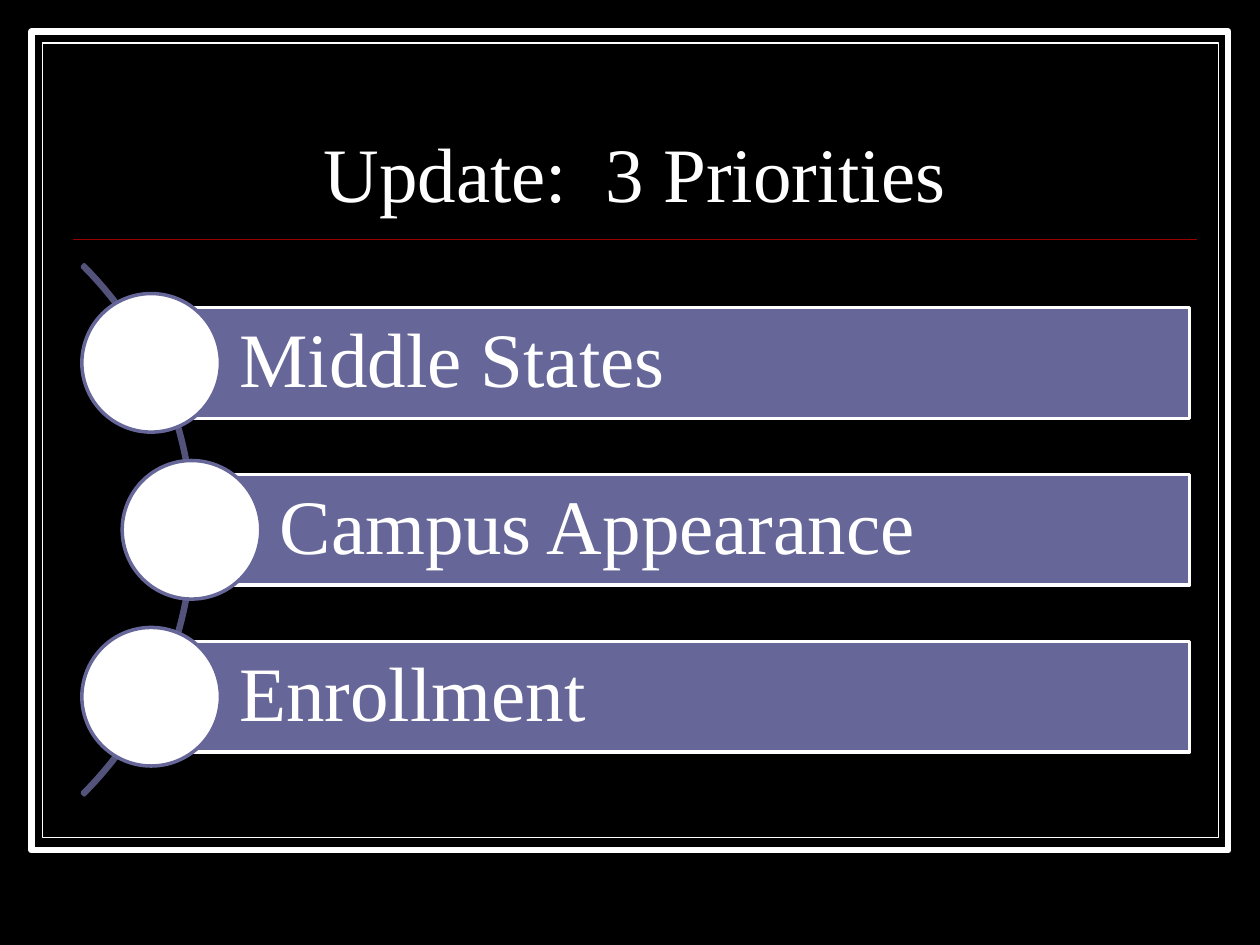
"""Build the "3 Priorities" slide: a framed title above a curved list of bars."""
from pptx import Presentation
from pptx.dml.color import RGBColor
from pptx.enum.shapes import MSO_CONNECTOR, MSO_SHAPE
from pptx.enum.text import MSO_ANCHOR, PP_ALIGN
from pptx.oxml.ns import qn
from pptx.util import Inches, Pt

RECTANGLE, OVAL, ARC = MSO_SHAPE.RECTANGLE, MSO_SHAPE.OVAL, MSO_SHAPE.BLOCK_ARC
STRAIGHT = MSO_CONNECTOR.STRAIGHT
MIDDLE, BOTTOM = MSO_ANCHOR.MIDDLE, MSO_ANCHOR.BOTTOM
LEFT, CENTER = PP_ALIGN.LEFT, PP_ALIGN.CENTER

BLACK = RGBColor(0x00, 0x00, 0x00)
WHITE = RGBColor(0xFF, 0xFF, 0xFF)
RED = RGBColor(0x99, 0x00, 0x00)
VIOLET = RGBColor(0x66, 0x66, 0x99)
DARK_VIOLET = RGBColor(0x52, 0x52, 0x7B)

PRIORITIES = [("Middle States", 1.2), ("Campus Appearance", 1.52), ("Enrollment", 1.2)]
FIRST_CENTER, PITCH = 2.88, 1.325
BAR_RIGHT, BAR_HEIGHT, DISC = 9.44, 0.88, 1.1


def write(frame, text, *, align=LEFT, anchor=MIDDLE, spacing=0.9,
          insets=(0.1, 0.05, 0.1, 0.05), size=44, font="Times New Roman", color=WHITE):
    frame.word_wrap = True
    frame.vertical_anchor = anchor
    (frame.margin_left, frame.margin_top,
     frame.margin_right, frame.margin_bottom) = map(Inches, insets)
    paragraph = frame.paragraphs[0]
    paragraph.alignment = align
    paragraph.line_spacing = spacing
    run = paragraph.add_run()
    run.text = text
    run.font.size = Pt(size)
    run.font.name = font
    run.font.color.rgb = color


class PrioritySlide:
    """Holds the slide and draws its elements in one style."""

    def __init__(self, presentation):
        self.slide = presentation.slides.add_slide(presentation.slide_layouts[6])
        self.slide.background.fill.solid()
        self.slide.background.fill.fore_color.rgb = BLACK

    def shape(self, kind, box, line, width=2, fill=None):
        shape = self.slide.shapes.add_shape(kind, *map(Inches, box))
        shape.shadow.inherit = False
        if fill is None:
            shape.fill.background()
        else:
            shape.fill.solid()
            shape.fill.fore_color.rgb = fill
        shape.line.color.rgb = line
        shape.line.width = Pt(width)
        return shape

    def rule(self, left, right, y, color, width=1):
        rule = self.slide.shapes.add_connector(
            STRAIGHT, Inches(left), Inches(y), Inches(right), Inches(y))
        rule.line.color.rgb = color
        rule.line.width = Pt(width)
        properties = rule._element.spPr
        properties.append(properties.makeelement(qn("a:effectLst"), {}))

    def title(self, text, box):
        title = self.slide.shapes.add_textbox(*map(Inches, box))
        write(title.text_frame, text, align=CENTER, anchor=BOTTOM, spacing=0.8)

    def curve(self, box):
        curve = self.shape(ARC, box, DARK_VIOLET)
        for index, value in enumerate((189, 27, 0.004)):
            curve.adjustments[index] = value

    def priority(self, text, left, center):
        bar = self.shape(
            RECTANGLE, (left, center - BAR_HEIGHT / 2, BAR_RIGHT - left, BAR_HEIGHT),
            WHITE, fill=VIOLET)
        write(bar.text_frame, text, insets=(0.7, 0.12, 0.12, 0.12))
        self.shape(OVAL, (left - DISC / 2, center - DISC / 2, DISC, DISC),
                   VIOLET, fill=WHITE)


def main():
    presentation = Presentation()
    presentation.slide_width = Inches(10)
    presentation.slide_height = Inches(7.5)

    page = PrioritySlide(presentation)
    page.shape(RECTANGLE, (0.25, 0.25, 9.5, 6.5), WHITE, width=3.5, fill=BLACK)
    page.shape(RECTANGLE, (0.34, 0.34, 9.33, 6.31), WHITE, width=0.75, fill=BLACK)
    page.rule(0.58, 9.5, 1.9, RED)
    page.title("Update:  3 Priorities", (0.58, 0.52, 8.92, 1.25))
    page.curve((-4.41, 1.23, 5.95, 5.95))
    for row, (text, left) in enumerate(PRIORITIES):
        page.priority(text, left, FIRST_CENTER + row * PITCH)

    presentation.save("out.pptx")


if __name__ == "__main__":
    main()
